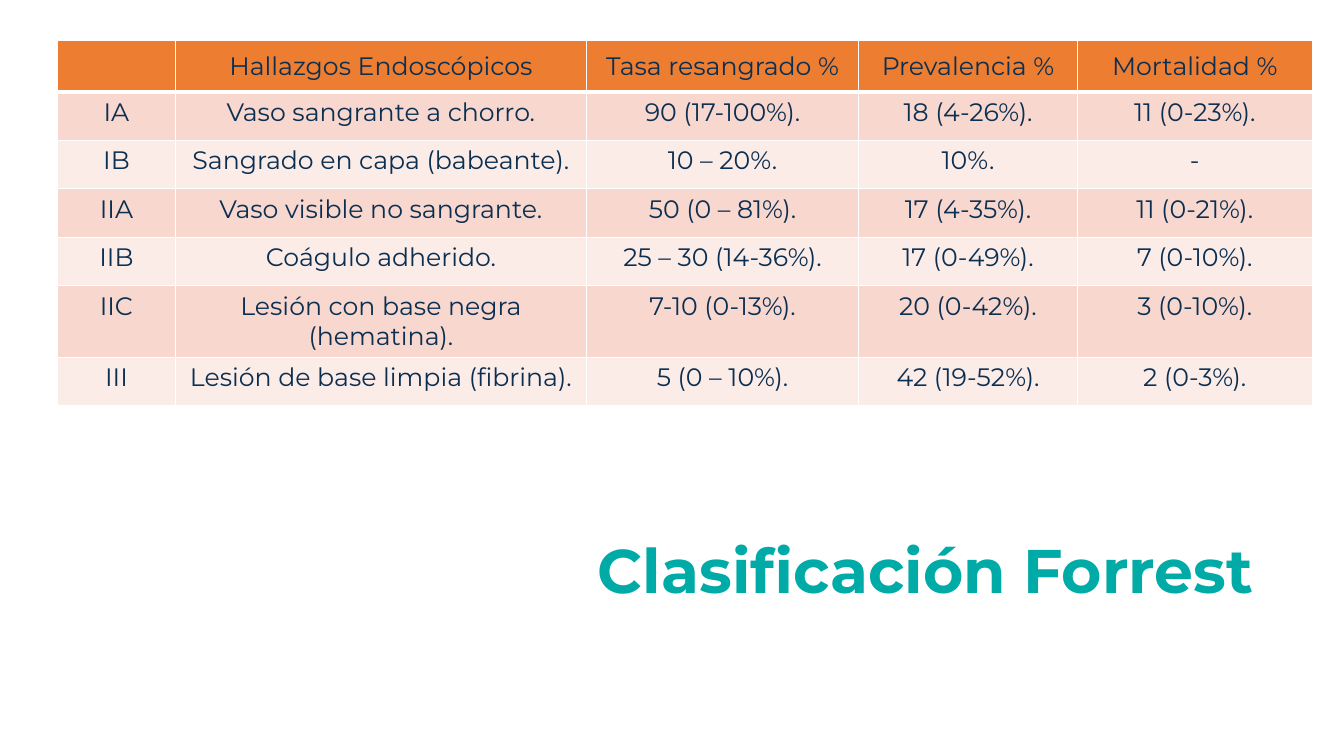
from dataclasses import dataclass

import pptx
import pptx.dml.color
import pptx.enum.text
import pptx.oxml
import pptx.oxml.ns
import pptx.util
from pptx.util import Cm


@dataclass(frozen=True)
class Theme:
    font: str = "Montserrat"
    text: str = "0B2F51"
    title: str = "00AAA7"
    header: str = "ED7D31"
    bands: tuple = ("F8D7CE", "FCECE8")
    border: str = "FFFFFF"
    table_size: int = 18
    title_size: int = 44


THEME = Theme()
COLUMN_WIDTHS = (2.97, 10.36, 6.86, 5.51, 5.92)
HEADER_HEIGHT, ROW_HEIGHT = 1.3, 1.22
FORREST_ROWS = (
    ("", "Hallazgos Endoscópicos", "Tasa resangrado %", "Prevalencia %", "Mortalidad %"),
    ("IA", "Vaso sangrante a chorro.", "90 (17-100%).", "18 (4-26%).", "11 (0-23%)."),
    ("IB", "Sangrado en capa (babeante).", "10 – 20%.", "10%.", "-"),
    ("IIA", "Vaso visible no sangrante.", "50 (0 – 81%).", "17 (4-35%).", "11 (0-21%)."),
    ("IIB", "Coágulo adherido.", "25 – 30 (14-36%).", "17 (0-49%).", "7 (0-10%)."),
    ("IIC", "Lesión con base negra (hematina).", "7-10 (0-13%).", "20 (0-42%).", "3 (0-10%)."),
    ("III", "Lesión de base limpia (fibrina).", "5 (0 – 10%).", "42 (19-52%).", "2 (0-3%)."),
)


def set_font(paragraph, size, color, bold=False):
    paragraph.font.name = THEME.font
    paragraph.font.size = pptx.util.Pt(size)
    paragraph.font.bold = bold
    paragraph.font.color.rgb = pptx.dml.color.RGBColor.from_string(color)


def add_borders(cell, bottom_width):
    """Outline a cell; call before filling it, as borders precede the fill."""
    properties = cell._tc.get_or_add_tcPr()
    for side, points in (("L", 1), ("R", 1), ("T", 1), ("B", bottom_width)):
        properties.append(pptx.oxml.parse_xml(
            f'<a:ln{side} {pptx.oxml.ns.nsdecls("a")} w="{pptx.util.Pt(points)}">'
            f'<a:solidFill><a:srgbClr val="{THEME.border}"/></a:solidFill></a:ln{side}>'))


def format_cell(cell, text, is_header, fill):
    add_borders(cell, 3 if is_header else 1)
    cell.fill.solid()
    cell.fill.fore_color.rgb = pptx.dml.color.RGBColor.from_string(fill)
    if is_header:
        cell.vertical_anchor = pptx.enum.text.MSO_ANCHOR.MIDDLE
    cell.text = text
    paragraph = cell.text_frame.paragraphs[0]
    paragraph.alignment = pptx.enum.text.PP_ALIGN.CENTER
    set_font(paragraph, THEME.table_size, THEME.text)


def add_forrest_table(slide, left, top):
    height = HEADER_HEIGHT + ROW_HEIGHT * (len(FORREST_ROWS) - 1)
    table = slide.shapes.add_table(
        len(FORREST_ROWS), len(COLUMN_WIDTHS),
        left, top, Cm(sum(COLUMN_WIDTHS)), Cm(height)).table
    table.first_row = False
    table.horz_banding = False
    for column, width in zip(table.columns, COLUMN_WIDTHS):
        column.width = Cm(width)
    for index, texts in enumerate(FORREST_ROWS):
        is_header = index == 0
        table.rows[index].height = Cm(HEADER_HEIGHT if is_header else ROW_HEIGHT)
        fill = THEME.header if is_header else THEME.bands[(index - 1) % 2]
        for cell, text in zip(table.rows[index].cells, texts):
            format_cell(cell, text, is_header, fill)


def place_title(slide, left, top, width, height):
    title = slide.shapes.title
    title.left, title.top, title.width, title.height = left, top, width, height
    frame = title.text_frame
    frame.text = "Clasificación Forrest"
    frame.word_wrap = True
    frame.auto_size = pptx.enum.text.MSO_AUTO_SIZE.NONE
    frame.vertical_anchor = pptx.enum.text.MSO_ANCHOR.TOP
    paragraph = frame.paragraphs[0]
    paragraph.alignment = pptx.enum.text.PP_ALIGN.LEFT
    paragraph.line_spacing = 0.9
    set_font(paragraph, THEME.title_size, THEME.title, bold=True)


def main():
    presentation = pptx.Presentation()
    presentation.slide_width, presentation.slide_height = Cm(33.87), Cm(19.05)
    title_only = presentation.slide_layouts[5]
    slide = presentation.slides.add_slide(title_only)
    add_forrest_table(slide, Cm(1.45), Cm(1.02))
    place_title(slide, Cm(14.81), Cm(13.49), Cm(18.19), Cm(1.27))
    presentation.save("out.pptx")


if __name__ == "__main__":
    main()
